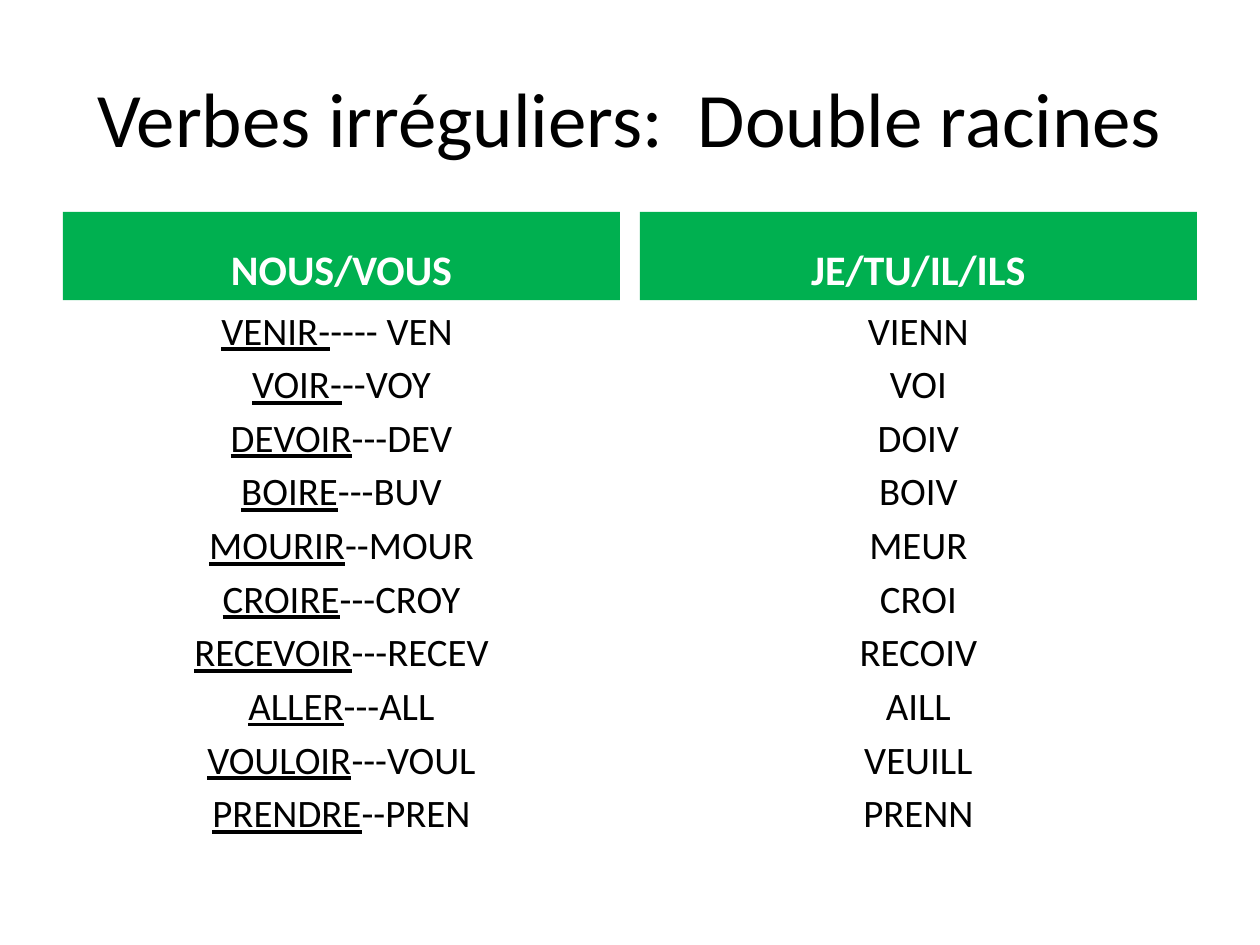
import pptx
import pptx.dml.color
import pptx.enum.shapes
import pptx.enum.text
import pptx.util

Cm = pptx.util.Cm
Pt = pptx.util.Pt
Anchor = pptx.enum.text.MSO_ANCHOR

BLACK = pptx.dml.color.RGBColor(0, 0, 0)
WHITE = pptx.dml.color.RGBColor(255, 255, 255)
GREEN = pptx.dml.color.RGBColor(0, 176, 80)

MARGIN = 1.27
COLUMN_WIDTH = 11.23
COLUMN_STEP = 11.63
HEADING_TOP, HEADING_HEIGHT = 4.27, 1.78
STEMS_HEIGHT = 10.97

NOUS_VOUS = [
    ("VENIR-", "---- VEN "),
    ("VOIR-", "--VOY"),
    ("DEVOIR", "---DEV"),
    ("BOIRE", "---BUV"),
    ("MOURIR", "--MOUR"),
    ("CROIRE", "---CROY"),
    ("RECEVOIR", "---RECEV"),
    ("ALLER", "---ALL"),
    ("VOULOIR", "---VOUL"),
    ("PRENDRE", "--PREN"),
]
JE_TU_IL_ILS = ["VIENN", "VOI", "DOIV", "BOIV", "MEUR",
                "CROI", "RECOIV", "AILL", "VEUILL", "PRENN"]
COLUMNS = [
    ("NOUS/VOUS", NOUS_VOUS),
    ("JE/TU/IL/ILS", [("", stem) for stem in JE_TU_IL_ILS]),
]


def write(paragraph, text, size=22.2, color=BLACK, bold=False, underline=False):
    run = paragraph.add_run()
    run.text = text
    run.font.name = "Calibri"
    run.font.size = Pt(size)
    run.font.color.rgb = color
    run.font.bold = bold
    run.font.underline = underline


class VerbSlide:
    def __init__(self, slide):
        self.slide = slide

    def prepare(self, frame, anchor):
        frame.word_wrap = True
        frame.vertical_anchor = anchor
        frame.paragraphs[0].alignment = pptx.enum.text.PP_ALIGN.CENTER
        return frame

    def text_box(self, left, top, width, height, anchor):
        box = self.slide.shapes.add_textbox(Cm(left), Cm(top), Cm(width), Cm(height))
        return self.prepare(box.text_frame, anchor)

    def title(self, text):
        frame = self.text_box(MARGIN, 0.76, 22.86, 3.18, Anchor.MIDDLE)
        write(frame.paragraphs[0], text, size=44)

    def heading(self, left, text):
        band = self.slide.shapes.add_shape(
            pptx.enum.shapes.MSO_SHAPE.RECTANGLE,
            Cm(left), Cm(HEADING_TOP), Cm(COLUMN_WIDTH), Cm(HEADING_HEIGHT))
        band.shadow.inherit = False
        band.fill.solid()
        band.fill.fore_color.rgb = GREEN
        band.line.fill.background()
        frame = self.prepare(band.text_frame, Anchor.BOTTOM)
        write(frame.paragraphs[0], text, size=24, color=WHITE, bold=True)

    def stems(self, left, rows):
        frame = self.text_box(left, HEADING_TOP + HEADING_HEIGHT,
                              COLUMN_WIDTH, STEMS_HEIGHT, Anchor.TOP)
        for index, (verb, stem) in enumerate(rows):
            paragraph = frame.add_paragraph() if index else frame.paragraphs[0]
            paragraph.alignment = pptx.enum.text.PP_ALIGN.CENTER
            paragraph.space_before = Pt(4)
            if verb:
                write(paragraph, verb, underline=True)
            write(paragraph, stem)


def main():
    deck = pptx.Presentation()
    deck.slide_width, deck.slide_height = Cm(25.4), Cm(19.05)
    verbs = VerbSlide(deck.slides.add_slide(deck.slide_layouts[6]))
    verbs.title("Verbes irréguliers:  Double racines")
    for index, (heading, rows) in enumerate(COLUMNS):
        left = MARGIN + index * COLUMN_STEP
        verbs.heading(left, heading)
        verbs.stems(left, rows)
    deck.save("out.pptx")


if __name__ == "__main__":
    main()
